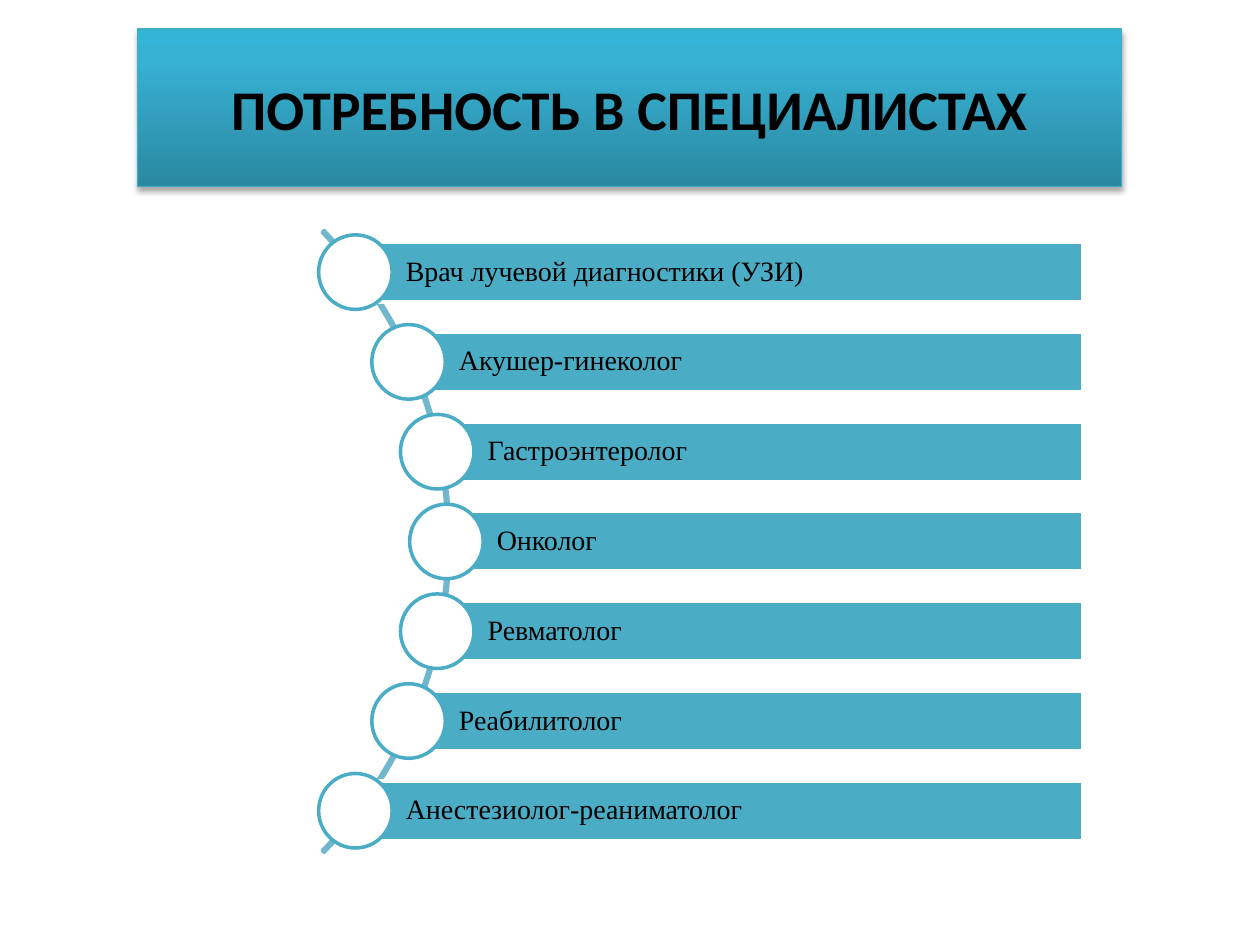
from copy import deepcopy
from math import sqrt

from lxml import etree
from pptx import Presentation
from pptx.dml.color import RGBColor
from pptx.enum import shapes, text
from pptx.oxml.ns import qn
from pptx.util import Pt

BLACK = RGBColor(0, 0, 0)
WHITE = RGBColor(0xFF, 0xFF, 0xFF)
TEAL = RGBColor(0x4B, 0xAC, 0xC6)
ARC = RGBColor(0x71, 0xB7, 0xCD)
EDGE = RGBColor(0x46, 0xAA, 0xC5)
SHADES = [(0, RGBColor(0x2A, 0x88, 0xA2)),
          (0.8, RGBColor(0x37, 0xB1, 0xD2)),
          (1, RGBColor(0x34, 0xB4, 0xD6))]

TITLE = "ПОТРЕБНОСТЬ В СПЕЦИАЛИСТАХ"
JOBS = ["Врач лучевой диагностики (УЗИ)", "Акушер-гинеколог",
        "Гастроэнтеролог", "Онколог", "Ревматолог", "Реабилитолог",
        "Анестезиолог-реаниматолог"]

# Arc and row measures, in points
MID_X, MID_Y = 7.6, 309.4
ARC_W, ARC_H = 499, 506
REACH = 247.5
STEP = 51.3
BAR_H, RIGHT = 34.1, 618.7
DOT_W, DOT_H = 42, 42.6


def box(place):
    return [Pt(v) for v in place]


def add_run(para, words, size, font, bold=False):
    run = para.add_run()
    run.text = words
    run.font.size, run.font.name, run.font.bold = Pt(size), font, bold
    run.font.color.rgb = BLACK


def add_form(group, kind, place, fill, line):
    form = group.shapes.add_shape(kind, *box(place))
    form.shadow.inherit = False
    if fill is None:
        form.fill.background()
    else:
        form.fill.solid()
        form.fill.fore_color.rgb = fill
    form.line.color.rgb = line
    form.line.width = Pt(2)
    return form


def shade(form):
    """Three-stop gradient, dark at the foot."""
    form.fill.gradient()
    form.fill.gradient_angle = 90
    stops = next(form._element.iter(qn("a:gsLst")))
    stops.append(deepcopy(stops[0]))
    for stop, (pos, color) in zip(form.fill.gradient_stops, SHADES):
        stop.position = pos
        stop.color.rgb = color


def drop_shadow(form):
    fx = etree.SubElement(form._element.spPr, qn("a:effectLst"))
    outer = etree.SubElement(fx, qn("a:outerShdw"), blurRad=str(Pt(3.1)),
                             dist=str(Pt(1.8)), dir="5400000", rotWithShape="0")
    color = etree.SubElement(outer, qn("a:srgbClr"), val=str(BLACK))
    etree.SubElement(color, qn("a:alpha"), val="35000")


def add_title(slide):
    title = slide.shapes.title
    title.left, title.top, title.width, title.height = box((78.5, 16.6, 562.5, 90))
    shade(title)
    title.line.color.rgb = EDGE
    title.line.width = Pt(0.75)
    drop_shadow(title)
    frame = title.text_frame
    frame.auto_size = text.MSO_AUTO_SIZE.NONE
    frame.vertical_anchor = text.MSO_ANCHOR.MIDDLE
    para = frame.paragraphs[0]
    para.alignment = text.PP_ALIGN.CENTER
    add_run(para, TITLE, 32, "Calibri", True)


def add_arc(group):
    place = MID_X - ARC_W / 2, MID_Y - ARC_H / 2, ARC_W, ARC_H
    arc = add_form(group, shapes.MSO_SHAPE.BLOCK_ARC, place, None, ARC)
    for i, value in enumerate((189, 27, 0.003)):
        arc.adjustments[i] = value


def add_bar(group, x, y, words):
    place = x, y - BAR_H / 2, RIGHT - x, BAR_H
    bar = add_form(group, shapes.MSO_SHAPE.RECTANGLE, place, TEAL, WHITE)
    frame = bar.text_frame
    frame.word_wrap = True
    frame.vertical_anchor = text.MSO_ANCHOR.MIDDLE
    frame.margin_left = Pt(28.8)
    frame.margin_right = frame.margin_top = frame.margin_bottom = Pt(5)
    para = frame.paragraphs[0]
    para.alignment = text.PP_ALIGN.LEFT
    para.line_spacing = 0.9
    para.space_after = Pt(5.6)
    add_run(para, words, 16, "Times New Roman")


def add_dot(group, x, y):
    place = x - DOT_W / 2, y - DOT_H / 2, DOT_W, DOT_H
    add_form(group, shapes.MSO_SHAPE.OVAL, place, WHITE, TEAL)


def main():
    deck = Presentation()
    deck.slide_width, deck.slide_height = Pt(720), Pt(540)
    slide = deck.slides.add_slide(deck.slide_layouts[5])
    add_title(slide)

    # Curved list: each row starts on the arc
    group = slide.shapes.add_group_shape()
    add_arc(group)
    for i, job in enumerate(JOBS):
        rise = (i - len(JOBS) // 2) * STEP
        x = MID_X + sqrt(REACH ** 2 - (rise * ARC_W / ARC_H) ** 2)
        add_bar(group, x, MID_Y + rise, job)
        add_dot(group, x, MID_Y + rise)

    deck.save("out.pptx")


if __name__ == "__main__":
    main()
